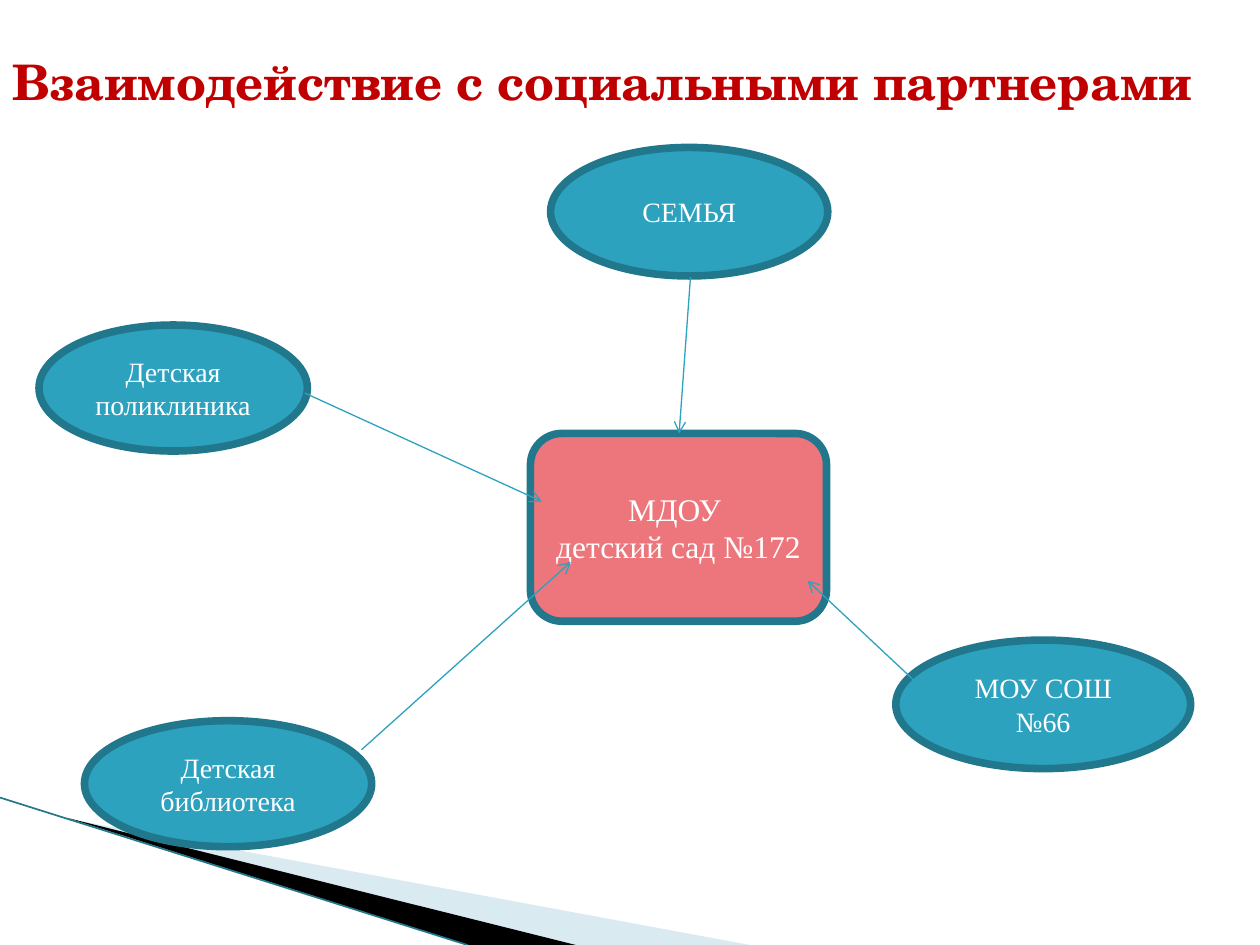
from lxml import etree
from pptx import Presentation
from pptx.dml.color import RGBColor
from pptx.enum import shapes, text
from pptx.oxml import ns
from pptx.util import Inches, Pt

COLORS = {
    "title": "C00000",
    "partner": "2DA2BF",
    "outline": "21788D",
    "center": "EC767C",
    "white": "FFFFFF",
    "black": "000000",
    "pale": "A0CBDC",
}
TITLE_FONT = "TeX Gyre Schola"
BODY_FONT = "Times New Roman"
PARTNERS = [
    ("Детская поликлиника", (0.31, 2.58, 2.13, 1)),
    ("МОУ СОШ №66", (7.11, 5.08, 2.34, 1.02)),
    ("Детская библиотека", (0.67, 5.72, 2.28, 1)),
    ("СЕМЬЯ", (4.37, 1.17, 2.2, 1.02)),
]
ARROWS = [
    ((5.48, 2.2), (5.39, 3.44)),
    ((2.42, 3.12), (4.3, 3.98)),
    ((2.87, 5.95), (4.53, 4.46)),
    ((7.5, 5.63), (6.41, 4.61)),
]


def color(name):
    """Return the named colour."""
    return RGBColor.from_string(COLORS[name])


def write(shape, content, font_name, size, color_name, alignment, bold=False):
    """Fill a shape with vertically centred text in one style."""
    frame = shape.text_frame
    frame.text = content
    frame.word_wrap = True
    frame.vertical_anchor = text.MSO_ANCHOR.MIDDLE
    for paragraph in frame.paragraphs:
        paragraph.alignment = alignment
        for run in paragraph.runs:
            run.font.name = font_name
            run.font.size = Pt(size)
            run.font.bold = bold
            run.font.color.rgb = color(color_name)


def add_line(slide, start, end, color_name, width, arrow=False):
    """Draw a straight line, with an open arrowhead at its end if asked."""
    points = [Inches(value) for value in (*start, *end)]
    line = slide.shapes.add_connector(shapes.MSO_CONNECTOR.STRAIGHT, *points)
    line.line.color.rgb = color(color_name)
    line.line.width = Pt(width)
    if arrow:
        etree.SubElement(line.line._get_or_add_ln(), ns.qn("a:tailEnd"), type="arrow")
    etree.SubElement(line._element.spPr, ns.qn("a:effectLst"))


def add_wedge(slide, points, color_name, opacity=100):
    """Draw a filled polygon without an outline."""
    start, *rest = [(Inches(x), Inches(y)) for x, y in points]
    builder = slide.shapes.build_freeform(*start)
    builder.add_line_segments(rest, close=True)
    wedge = builder.convert_to_shape()
    wedge.shadow.inherit = False
    wedge.fill.solid()
    wedge.fill.fore_color.rgb = color(color_name)
    wedge.line.fill.background()
    if opacity < 100:
        fill = wedge._element.spPr.find(".//" + ns.qn("a:srgbClr"))
        etree.SubElement(fill, ns.qn("a:alpha"), val=str(opacity * 1000))


def add_corner(slide, left, top, width, height):
    """Draw the wedges and the line that decorate the bottom corner."""
    bottom = top + height
    add_wedge(slide, [(left + 0.55, top + 0.17), (left + width, bottom),
                      (left + 4.56, bottom)], "pale", 40)
    add_wedge(slide, [(left + 0.53, top + 0.16), (left + 4.57, bottom),
                      (left + 3.72, bottom)], "black")
    add_line(slide, (left, top), (left + 3.71, bottom), "outline", 0.95)


def add_title(slide, left, top, width, height):
    """Place the slide title."""
    box = slide.shapes.add_textbox(*map(Inches, (left, top, width, height)))
    write(box, "Взаимодействие с социальными партнерами", TITLE_FONT, 28,
          "title", text.PP_ALIGN.LEFT, bold=True)


def add_node(slide, kind, box, content, size, fill):
    """Draw one outlined, labelled node of the diagram."""
    node = slide.shapes.add_shape(kind, *map(Inches, box))
    node.shadow.inherit = False
    node.fill.solid()
    node.fill.fore_color.rgb = color(fill)
    node.line.color.rgb = color("outline")
    node.line.width = Pt(4.33)
    write(node, content, BODY_FONT, size, "white", text.PP_ALIGN.CENTER)


def add_diagram(slide, left, top):
    """Place the kindergarten, its partners and the arrows between them."""
    add_node(slide, shapes.MSO_SHAPE.ROUNDED_RECTANGLE,
             (left + 4.21, top + 3.44, 2.35, 1.49),
             "МДОУ \nдетский сад №172", 18, "center")
    for name, (x, y, width, height) in PARTNERS:
        add_node(slide, shapes.MSO_SHAPE.OVAL, (left + x, top + y, width, height),
                 name, 16, "partner")
    for start, end in ARROWS:
        add_line(slide, (left + start[0], top + start[1]),
                 (left + end[0], top + end[1]), "partner", 0.75, arrow=True)


def main():
    """Build and save the presentation."""
    presentation = Presentation()
    presentation.slide_width = Inches(10)
    presentation.slide_height = Inches(7.5)
    slide = presentation.slides.add_slide(presentation.slide_layouts[6])
    add_corner(slide, 0, 6.33, 5.95, 1.17)
    add_title(slide, 0, 0.3, 10, 0.69)
    add_diagram(slide, 0, 0)
    presentation.save("out.pptx")


if __name__ == "__main__":
    main()
